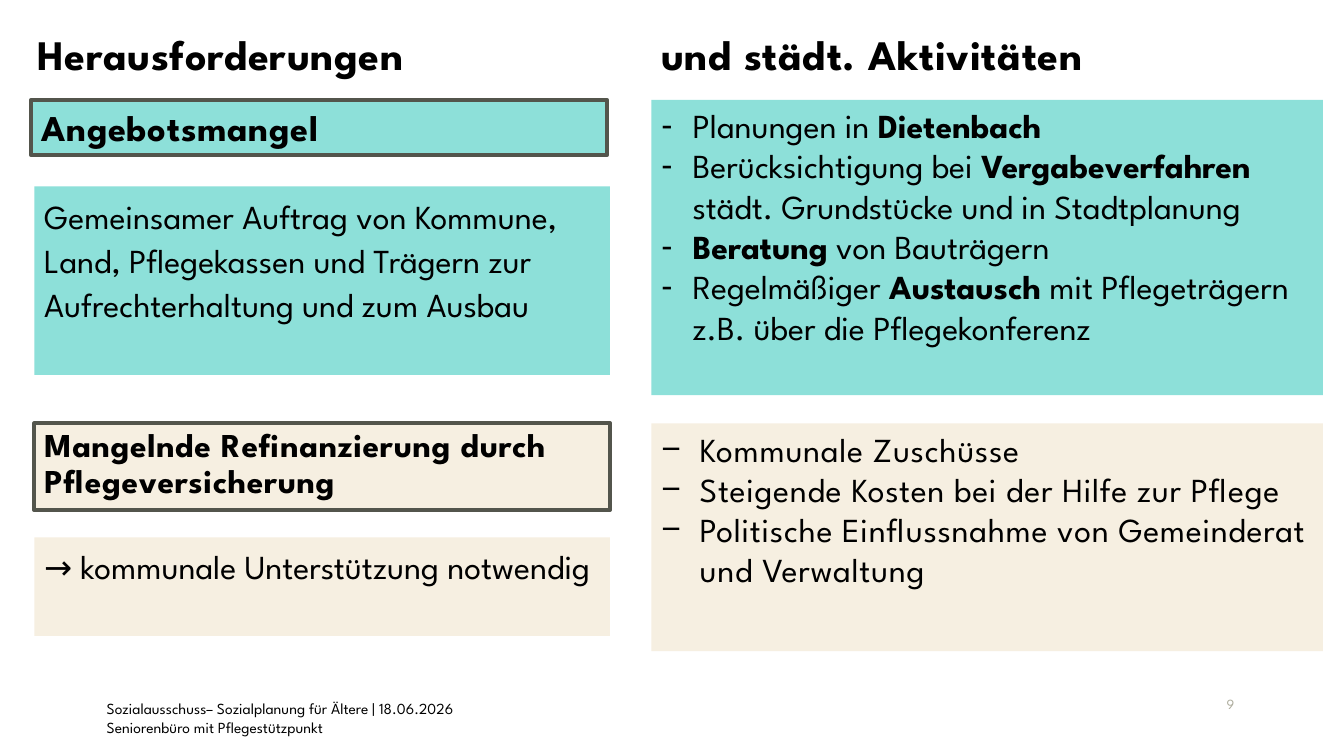
from lxml import etree
from pptx import Presentation
from pptx.dml.color import RGBColor
from pptx.enum.shapes import MSO_SHAPE
from pptx.enum.text import MSO_ANCHOR, MSO_AUTO_SIZE, PP_ALIGN
from pptx.oxml.ns import qn
from pptx.util import Inches, Pt

RECT = MSO_SHAPE.RECTANGLE
TOP, MIDDLE = MSO_ANCHOR.TOP, MSO_ANCHOR.MIDDLE
LEFT, RIGHT = PP_ALIGN.LEFT, PP_ALIGN.RIGHT
FIXED = MSO_AUTO_SIZE.NONE

COLORS = {"teal": "8DE0D9", "sand": "F6EFE1", "frame": "53554C",
          "text": "000000", "number": "ACAB9B"}
LEFT_X, RIGHT_X = 0.34, 6.46
LEFT_W, RIGHT_W = 5.71, 6.66


def color(name):
    return RGBColor.from_string(COLORS[name])


class Board:
    def __init__(self, slide, font):
        self.slide = slide
        self.font = font

    def holder(self, idx, box):
        shape = self.slide.placeholders[idx]
        shape.left, shape.top, shape.width, shape.height = map(Inches, box)
        return shape

    def rect(self, box):
        shape = self.slide.shapes.add_shape(RECT, *map(Inches, box))
        shape.shadow.inherit = False
        return shape

    def label(self, box):
        return self.slide.shapes.add_textbox(*map(Inches, box))

    def paint(self, shape, fill, framed=False):
        shape.fill.solid()
        shape.fill.fore_color.rgb = color(fill)
        if framed:
            shape.line.color.rgb = color("frame")
            shape.line.width = Pt(3)
        else:
            shape.line.fill.background()

    def put(self, shape, lines, size, bold=False, tone="text", align=LEFT,
            anchor=TOP, spread=0, pitch=1.0, bullet=None, indent=0):
        """Fill a shape with paragraphs; ** switches bold on and off."""
        frame = shape.text_frame
        frame.word_wrap = True
        frame.auto_size = FIXED
        frame.vertical_anchor = anchor
        for i, line in enumerate(lines):
            para = frame.paragraphs[0] if i == 0 else frame.add_paragraph()
            if bullet:
                self.mark(para, bullet, indent)
            para.alignment = align
            para.line_spacing = pitch
            para.space_before = Pt(0)
            for j, part in enumerate(line.split("**")):
                if part:
                    run = para.add_run()
                    run.text = part
                    self.style(run, size, bold or j % 2 == 1, tone, spread)

    def mark(self, para, bullet, indent):
        props = para._p.get_or_add_pPr()
        props.set("marL", str(Inches(indent)))
        props.set("indent", str(-Inches(indent)))
        etree.SubElement(props, qn("a:buChar")).set("char", bullet)

    def style(self, run, size, bold, tone, spread):
        font = run.font
        font.name, font.size, font.bold = self.font, Pt(size), bold
        font.color.rgb = color(tone)
        if spread:
            run._r.get_or_add_rPr().set("spc", str(int(spread * 100)))


def main():
    deck = Presentation()
    deck.slide_width, deck.slide_height = Inches(13.33), Inches(7.5)
    board = Board(deck.slides.add_slide(deck.slide_layouts[4]),
                  "League Spartan")

    # Column headings
    head = board.holder(0, (0.27, 0.23, 5.72, 0.61))
    board.put(head, ["Herausforderungen"], 30, bold=True, spread=0.5)
    head = board.label((RIGHT_X, 0.23, 6.81, 0.61))
    board.put(head, ["und städt. Aktivitäten"], 30, bold=True, spread=0.5)

    # Framed challenges
    supply = board.holder(1, (0.31, 0.99, LEFT_W, 0.55))
    board.paint(supply, "teal", framed=True)
    board.put(supply, ["Angebotsmangel"], 25.9, bold=True, spread=0.5)
    funding = board.holder(3, (LEFT_X, 4.2, LEFT_W, 0.86))
    board.paint(funding, "sand", framed=True)
    board.put(funding, ["Mangelnde Refinanzierung durch Pflegeversicherung"],
              23.8, bold=True, spread=0.5, pitch=0.9)

    # Explanations below them
    notes = [
        (1.85, 1.87, "teal", "Gemeinsamer Auftrag von Kommune, Land, Pflegekassen "
         "und Trägern zur Aufrechterhaltung und zum Ausbau"),
        (5.33, 0.98, "sand", "→ kommunale Unterstützung notwendig"),
    ]
    for top, height, fill, text in notes:
        note = board.rect((LEFT_X, top, LEFT_W, height))
        board.paint(note, fill)
        board.put(note, [text], 24, pitch=1.1)

    # City activities
    plans = board.holder(2, (RIGHT_X, 0.99, RIGHT_W, 2.93))
    board.paint(plans, "teal")
    board.put(plans, [
        "Planungen in **Dietenbach**",
        "Berücksichtigung bei **Vergabeverfahren** städt. Grundstücke "
        "und in Stadtplanung",
        "**Beratung** von Bauträgern",
        "Regelmäßiger **Austausch** mit Pflegeträgern z.B. über die "
        "Pflegekonferenz",
    ], 24, bullet="-", indent=0.31)
    grants = board.holder(4, (RIGHT_X, 4.2, RIGHT_W, 2.26))
    board.paint(grants, "sand")
    board.put(grants, [
        "Kommunale Zuschüsse",
        "Steigende Kosten bei der Hilfe zur Pflege",
        "Politische Einflussnahme von Gemeinderat und Verwaltung",
    ], 24, spread=0.5, bullet="−", indent=0.38)

    # Footer
    board.put(board.label((0.96, 6.89, 4.92, 0.48)), [
        "Sozialausschuss– Sozialplanung für Ältere | 18.06.2026",
        "Seniorenbüro mit Pflegestützpunkt",
    ], 11)
    board.put(board.label((9.34, 6.85, 3, 0.27)), ["9"], 10,
              tone="number", align=RIGHT, anchor=MIDDLE)

    deck.save("out.pptx")


if __name__ == "__main__":
    main()
